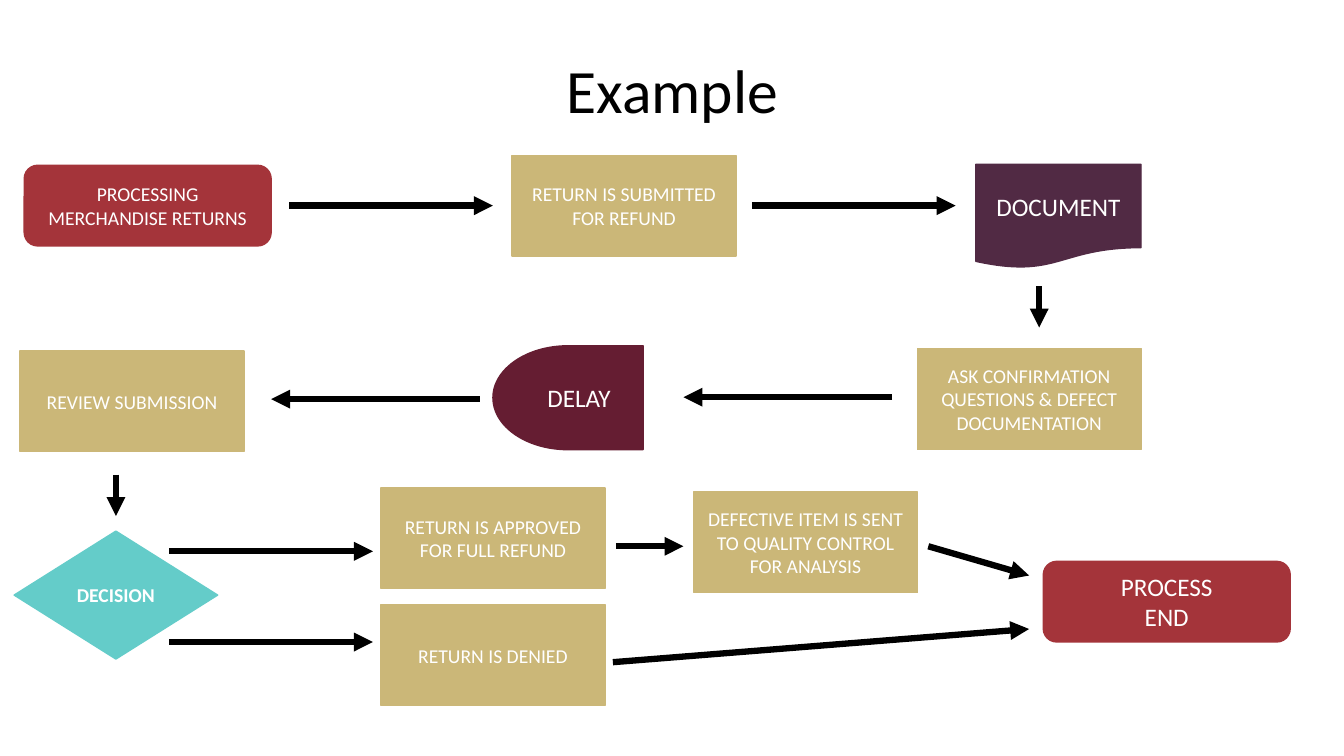
"""Build a flowchart slide on processing merchandise returns."""
from dataclasses import dataclass

from lxml import etree
from pptx import Presentation
from pptx.dml.color import RGBColor
from pptx.enum.dml import MSO_LINE
from pptx.enum.shapes import MSO_CONNECTOR, MSO_SHAPE
from pptx.enum.text import MSO_ANCHOR, MSO_AUTO_SIZE, PP_ALIGN
from pptx.oxml.ns import qn
from pptx.slide import Slide
from pptx.text.text import TextFrame
from pptx.util import Pt

STRAIGHT = MSO_CONNECTOR.STRAIGHT
SOLID = MSO_LINE.SOLID
PROCESS = MSO_SHAPE.FLOWCHART_PROCESS
TERMINAL = MSO_SHAPE.FLOWCHART_ALTERNATE_PROCESS
DOCUMENT = MSO_SHAPE.FLOWCHART_DOCUMENT
DELAY = MSO_SHAPE.FLOWCHART_DELAY
DECISION = MSO_SHAPE.FLOWCHART_DECISION
MIDDLE = MSO_ANCHOR.MIDDLE
CENTER = PP_ALIGN.CENTER
NO_AUTOFIT = MSO_AUTO_SIZE.NONE

FONT = "Calibri"
TITLE_ONLY = 5
COLOURS = {
    "black": "000000",
    "white": "FFFFFF",
    "teal": "64CCC9",
    "sand": "CBB778",
    "red": "A4343A",
    "plum": "512A44",
    "wine": "651D32",
}


@dataclass(frozen=True)
class Kind:
    """Look shared by all steps of one flowchart type."""

    shape: MSO_SHAPE
    colour: str
    width: float
    height: float
    bold: bool = False
    mirrored: bool = False


@dataclass(frozen=True)
class Step:
    """One flowchart box, with a paragraph per line of text."""

    kind: Kind
    left: float
    top: float
    text: str
    size: float = 14


@dataclass(frozen=True)
class Arrow:
    """A straight arrow from a start point to an end point."""

    start_x: float
    start_y: float
    end_x: float
    end_y: float


ACTION = Kind(PROCESS, "sand", 160, 72)
ENDPOINT = Kind(TERMINAL, "red", 176.4, 57.6)
PAPER = Kind(DOCUMENT, "plum", 118, 74.2)
WAIT = Kind(DELAY, "wine", 107.3, 74.2, mirrored=True)
CHOICE = Kind(DECISION, "teal", 145.4, 91.4, bold=True)

STEPS = [
    Step(ENDPOINT, 17.3, 118.1, "PROCESSING MERCHANDISE RETURNS"),
    Step(ACTION, 365.8, 110.9, "RETURN IS SUBMITTED FOR REFUND"),
    Step(PAPER, 697, 117.4, "DOCUMENT", 18),
    Step(ACTION, 655.2, 249.1, "ASK CONFIRMATION QUESTIONS & DEFECT DOCUMENTATION"),
    Step(WAIT, 352.1, 247, "DELAY", 18),
    Step(ACTION, 14.4, 250.6, "REVIEW SUBMISSION"),
    Step(CHOICE, 10.1, 379.4, "DECISION"),
    Step(ACTION, 272.2, 348.5, "RETURN IS APPROVED FOR FULL REFUND"),
    Step(ACTION, 272.2, 432, "RETURN IS DENIED"),
    Step(ACTION, 495.4, 351.4, "DEFECTIVE ITEM IS SENT TO QUALITY CONTROL FOR ANALYSIS"),
    Step(ENDPOINT, 745.2, 401, "PROCESS\nEND", 18),
]

ARROWS = [
    Arrow(206.6, 146.9, 352.1, 146.9),
    Arrow(537.1, 146.9, 682.6, 146.9),
    Arrow(742.3, 204.5, 742.3, 234),
    Arrow(637.2, 283.7, 488.2, 283.7),
    Arrow(342.7, 285.1, 193.7, 285.1),
    Arrow(82.8, 339.1, 82.8, 368.6),
    Arrow(121, 393.8, 266.4, 393.8),
    Arrow(121, 458.6, 266.4, 458.6),
    Arrow(439.9, 390.2, 488.2, 390.2),
    Arrow(663.1, 390.2, 735.1, 411.1),
    Arrow(437.8, 473, 735.1, 449.3),
]


def colour(name: str) -> RGBColor:
    """Look up a named colour."""
    return RGBColor.from_string(COLOURS[name])


def write(frame: TextFrame, text: str, size: float, ink: str, bold: bool = False) -> None:
    """Fill a text frame with centred paragraphs, one per line."""
    frame.word_wrap = True
    frame.auto_size = NO_AUTOFIT
    frame.vertical_anchor = MIDDLE
    for index, line in enumerate(text.split("\n")):
        para = frame.add_paragraph() if index else frame.paragraphs[0]
        para.alignment = CENTER
        span = para.add_run()
        span.text = line
        span.font.name = FONT
        span.font.size = Pt(size)
        span.font.bold = bold
        span.font.color.rgb = colour(ink)


def draw_title(page: Slide, text: str) -> None:
    """Place and format the title placeholder."""
    title = page.shapes.title
    title.left, title.top = Pt(66.2), Pt(14.4)
    title.width, title.height = Pt(828), Pt(104.4)
    write(title.text_frame, text, 44, "black")
    title.text_frame.paragraphs[0].line_spacing = 0.9


def draw_step(page: Slide, step: Step) -> None:
    """Draw one flowchart box with its text."""
    kind = step.kind
    box = page.shapes.add_shape(
        kind.shape, Pt(step.left), Pt(step.top), Pt(kind.width), Pt(kind.height)
    )
    box.shadow.inherit = False
    box.fill.solid()
    box.fill.fore_color.rgb = colour(kind.colour)
    box.line.color.rgb = colour(kind.colour)
    box.line.width = Pt(1)
    if kind.mirrored:
        box._element.spPr.find(qn("a:xfrm")).set("flipH", "1")
    write(box.text_frame, step.text, step.size, "white", kind.bold)


def draw_arrow(page: Slide, arrow: Arrow) -> None:
    """Draw one thick black arrow."""
    line = page.shapes.add_connector(
        STRAIGHT, Pt(arrow.start_x), Pt(arrow.start_y), Pt(arrow.end_x), Pt(arrow.end_y)
    )
    line.line.color.rgb = colour("black")
    line.line.width = Pt(4.5)
    line.line.dash_style = SOLID
    properties = line._element.spPr
    etree.SubElement(properties.find(qn("a:ln")), qn("a:tailEnd"), type="triangle")
    etree.SubElement(properties, qn("a:effectLst"))


def main() -> None:
    """Create the deck and save it."""
    deck = Presentation()
    deck.slide_width, deck.slide_height = Pt(960), Pt(540)
    page = deck.slides.add_slide(deck.slide_layouts[TITLE_ONLY])
    draw_title(page, "Example")
    for step in STEPS:
        draw_step(page, step)
    for arrow in ARROWS:
        draw_arrow(page, arrow)
    deck.save("out.pptx")


if __name__ == "__main__":
    main()
